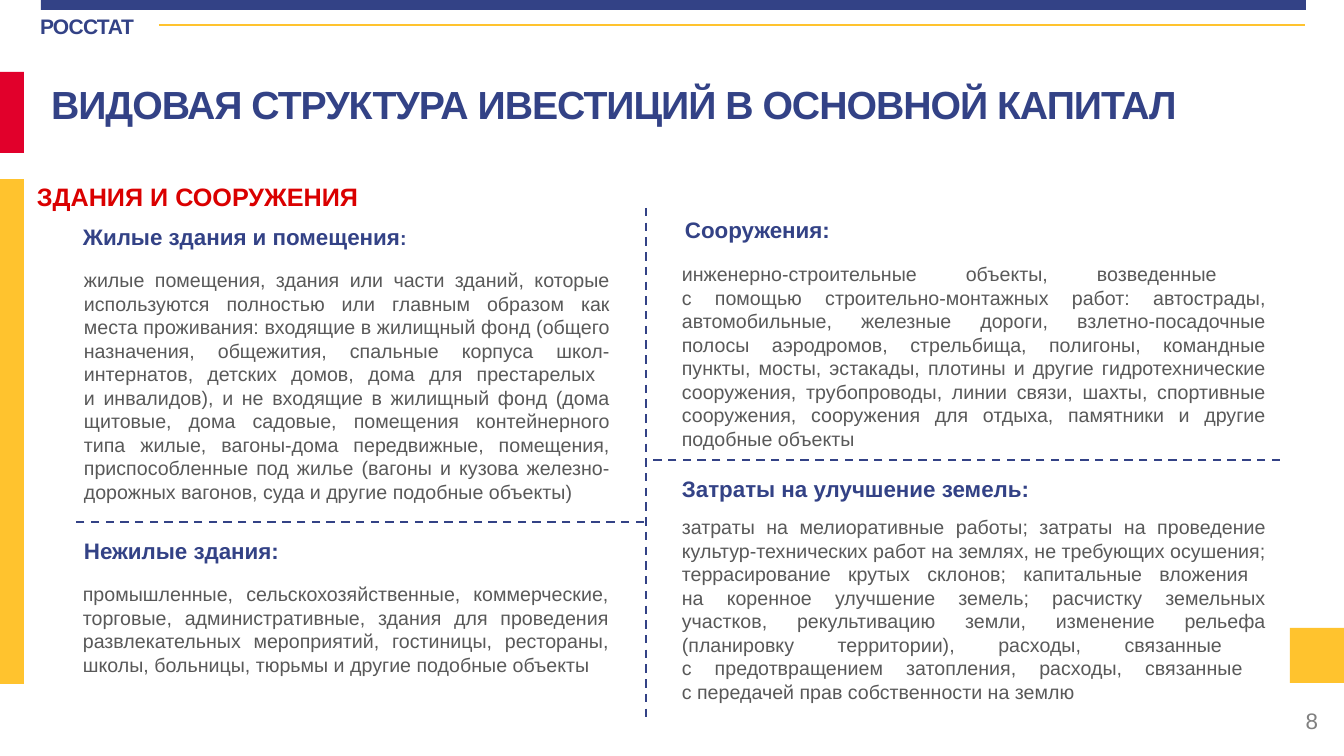
from dataclasses import dataclass

from lxml import etree
from pptx import Presentation
from pptx.dml.color import RGBColor
from pptx.enum.dml import MSO_LINE
from pptx.enum.shapes import MSO_CONNECTOR, MSO_SHAPE
from pptx.enum.text import MSO_ANCHOR, PP_ALIGN
from pptx.oxml.ns import qn
from pptx.util import Emu, Pt

NAVY = RGBColor(0x33, 0x42, 0x86)
GOLD = RGBColor(0xFF, 0xC3, 0x2E)
CRIMSON = RGBColor(0xE1, 0x00, 0x2B)
RED = RGBColor(0xDA, 0x00, 0x00)
GREY = RGBColor(0x59, 0x59, 0x59)
PALE = RGBColor(0x80, 0x80, 0x80)

RECT = MSO_SHAPE.RECTANGLE
STRAIGHT = MSO_CONNECTOR.STRAIGHT
DASH, SOLID = MSO_LINE.DASH, MSO_LINE.SOLID
TOP, MIDDLE = MSO_ANCHOR.TOP, MSO_ANCHOR.MIDDLE
LEFT, RIGHT, JUSTIFY = PP_ALIGN.LEFT, PP_ALIGN.RIGHT, PP_ALIGN.JUSTIFY
FONT = "Arial"


def px(count: int) -> Emu:
    return Emu(round(count * 914400 / 100.8))


@dataclass
class Box:
    x: int
    y: int
    w: int
    h: int

    def place(self) -> tuple:
        return px(self.x), px(self.y), px(self.w), px(self.h)


@dataclass
class Bar:
    box: Box
    color: RGBColor


@dataclass
class Rule:
    start: tuple[int, int]
    end: tuple[int, int]
    color: RGBColor = NAVY
    width: float = 1.5
    dash: MSO_LINE = DASH


@dataclass
class Part:
    head: str
    head_box: Box
    text: str
    text_box: Box
    colon: int = 16


BARS = [
    Bar(Box(41, 0, 1265, 10), NAVY),
    Bar(Box(0, 72, 24, 81), CRIMSON),
    Bar(Box(0, 179, 24, 505), GOLD),
    Bar(Box(1290, 628, 54, 55), GOLD),
]
RULES = [
    Rule((159, 25), (1305, 25), GOLD, 2, SOLID),
    Rule((646, 208), (646, 720)),
    Rule((644, 522), (73, 522)),
    Rule((1280, 460), (649, 460)),
]
PARTS = [
    Part("Жилые здания и помещения", Box(73, 218, 672, 37),
         "жилые помещения, здания или части зданий, которые используются "
         "полностью или главным образом как места проживания: входящие в "
         "жилищный фонд (общего назначения, общежития, спальные корпуса "
         "школ-интернатов, детских домов, дома для престарелых \n"
         "и инвалидов), и не входящие в жилищный фонд (дома щитовые, дома "
         "садовые, помещения контейнерного типа жилые, вагоны-дома "
         "передвижные, помещения, приспособленные под жилье (вагоны и кузова "
         "железно-дорожных вагонов, суда и другие подобные объекты)",
         Box(74, 263, 546, 248), colon=14),
    Part("Нежилые здания", Box(74, 532, 672, 37),
         "промышленные, сельскохозяйственные, коммерческие, торговые, "
         "административные, здания для проведения развлекательных "
         "мероприятий, гостиницы, рестораны, школы, больницы, тюрьмы и "
         "другие подобные объекты",
         Box(73, 577, 546, 105)),
    Part("Сооружения", Box(675, 211, 672, 37),
         "инженерно-строительные объекты, возведенные \n"
         "с помощью строительно-монтажных работ: автострады, автомобильные, "
         "железные дороги, взлетно-посадочные полосы аэродромов, стрельбища, "
         "полигоны, командные пункты, мосты, эстакады, плотины и другие "
         "гидротехнические сооружения, трубопроводы, линии связи, шахты, "
         "спортивные сооружения, сооружения для отдыха, памятники и другие "
         "подобные объекты",
         Box(672, 257, 604, 201)),
    Part("Затраты на улучшение земель", Box(672, 470, 672, 37),
         "затраты на мелиоративные работы; затраты на проведение "
         "культур-технических работ на землях, не требующих осушения; "
         "террасирование крутых склонов; капитальные вложения \n"
         "на коренное улучшение земель; расчистку земельных участков, "
         "рекультивацию земли, изменение рельефа (планировку территории), "
         "расходы, связанные \n"
         "с предотвращением затопления, расходы, связанные \n"
         "с передачей прав собственности на землю",
         Box(672, 510, 604, 201)),
]


def write(shape, text: str, size: int, color: RGBColor, bold: bool = False,
          align: PP_ALIGN = LEFT, anchor: MSO_ANCHOR = TOP):
    frame = shape.text_frame
    frame.word_wrap = True
    frame.vertical_anchor = anchor
    para = frame.paragraphs[0]
    para.text = text
    para.alignment = align
    font = para.font
    font.name, font.size, font.bold = FONT, Pt(size), bold
    font.color.rgb = color
    return para


def track(para, points: float) -> None:
    for run in para.runs:
        run._r.get_or_add_rPr().set("spc", str(round(points * 100)))


def add_text(slide, box: Box, *args, **kwargs):
    return write(slide.shapes.add_textbox(*box.place()), *args, **kwargs)


def add_bar(slide, bar: Bar) -> None:
    shape = slide.shapes.add_shape(RECT, *bar.box.place())
    shape.shadow.inherit = False
    shape.fill.solid()
    shape.fill.fore_color.rgb = bar.color
    shape.line.fill.background()


def add_rule(slide, rule: Rule) -> None:
    ends = [px(n) for n in (*rule.start, *rule.end)]
    wire = slide.shapes.add_connector(STRAIGHT, *ends)
    wire.line.color.rgb = rule.color
    wire.line.width = Pt(rule.width)
    wire.line.dash_style = rule.dash
    etree.SubElement(wire._element.spPr, qn("a:effectLst"))


def add_part(slide, part: Part) -> None:
    head = add_text(slide, part.head_box, part.head, 16, NAVY, bold=True)
    colon = head.add_run()
    colon.text = ":"
    if part.colon != 16:
        colon.font.size = Pt(part.colon)
    add_text(slide, part.text_box, part.text, 14, GREY, align=JUSTIFY)


def main() -> None:
    deck = Presentation()
    deck.slide_width, deck.slide_height = px(1344), px(756)
    slide = deck.slides.add_slide(deck.slide_layouts[5])

    # Frame of the page
    for bar in BARS:
        add_bar(slide, bar)
    for rule in RULES:
        add_rule(slide, rule)
    label = slide.shapes.add_textbox(*Box(40, 14, 116, 32).place())
    frame = label.text_frame
    frame.margin_left = frame.margin_right = 0
    frame.margin_top = frame.margin_bottom = 0
    track(write(label, "РОССТАТ", 15, NAVY, bold=True), -0.5)
    add_text(slide, Box(1026, 701, 302, 40), "8", 16, PALE,
             align=RIGHT, anchor=MIDDLE)

    # Title and heading
    title = slide.shapes.title
    title.left, title.top, title.width, title.height = Box(
        41, 81, 1210, 77).place()
    para = write(title, "ВИДОВАЯ СТРУКТУРА ИВЕСТИЦИЙ В ОСНОВНОЙ КАПИТАЛ",
                 28, NAVY, bold=True)
    para.line_spacing = 0.9
    track(para, -0.7)
    para = add_text(slide, Box(27, 173, 642, 35), "ЗДАНИЯ И СООРУЖЕНИЯ",
                    18, RED, bold=True)
    para.line_spacing = Pt(24)

    # Four kinds of assets
    for part in PARTS:
        add_part(slide, part)

    deck.save("out.pptx")


if __name__ == "__main__":
    main()
